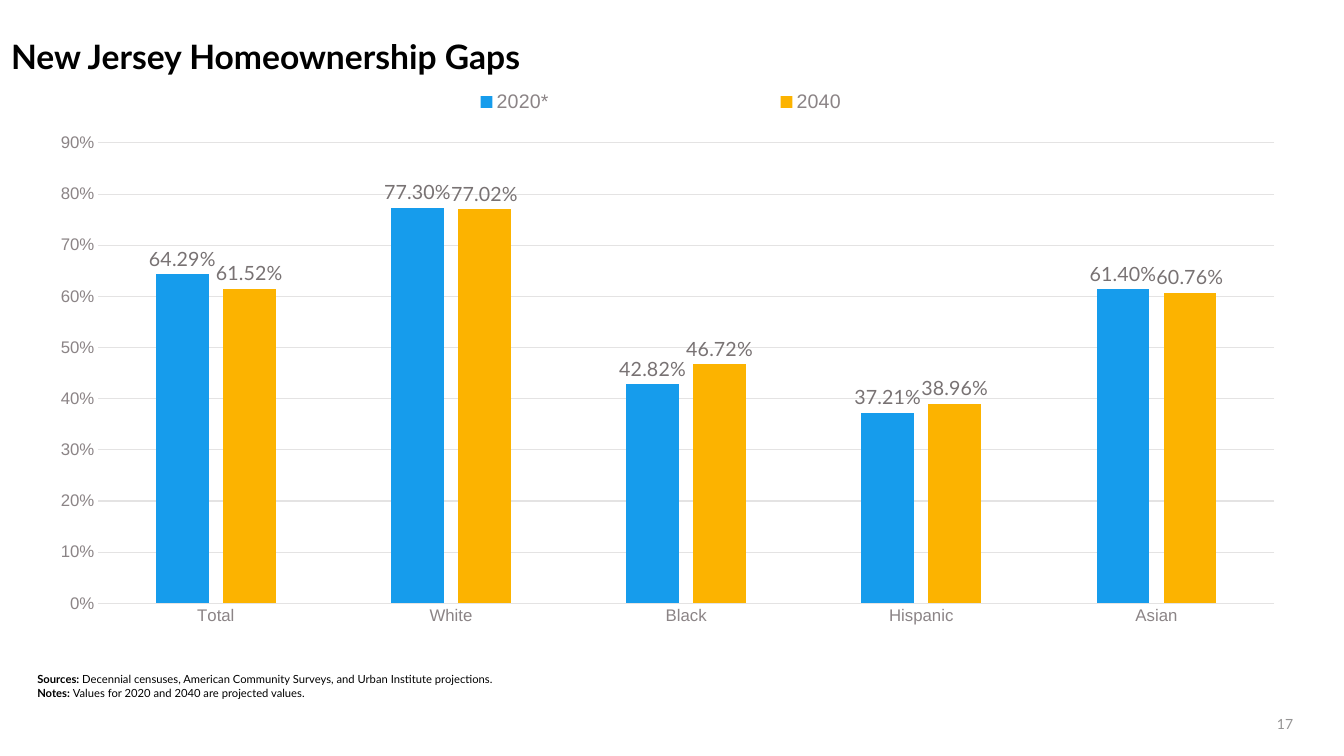
import pptx
import pptx.chart.data
import pptx.dml.color
import pptx.enum.chart
import pptx.enum.text
import pptx.oxml
import pptx.util
from pptx.oxml.ns import nsdecls, qn

Cm = pptx.util.Cm
ALIGN = pptx.enum.text.PP_ALIGN
ANCHOR = pptx.enum.text.MSO_ANCHOR
COLORS = {
    "ink": "000000", "number": "959494", "axis": "8B8486", "label": "787273",
    "grid": "E4E3E3", "2020*": "169CEC", "2040": "FCB300", "paper": "FFFFFF",
}
CATEGORIES = ["Total", "White", "Black", "Hispanic", "Asian"]
RATES = {
    "2020*": [0.6429, 0.7730, 0.4282, 0.3721, 0.6140],
    "2040": [0.6152, 0.7702, 0.4672, 0.3896, 0.6076],
}
NOTES = [
    ("Sources: ", "Decennial censuses, American Community Surveys, and Urban Institute projections."),
    ("Notes: ", "Values for 2020 and 2040 are projected values."),
]


def color(name):
    """Return the named colour."""
    return pptx.dml.color.RGBColor.from_string(COLORS[name])


class HomeownershipPage:
    """Hold the text style and the page being built."""

    def __init__(self, deck):
        """Add a title-only page to the deck."""
        self.face = "Lato"
        self.chart_face = "Arial"
        self.page = deck.slides.add_slide(deck.slide_layouts[5])

    def style(self, font, size, shade, face=None, bold=False):
        """Apply size, colour, face and weight to a font."""
        font.name = face or self.face
        font.size = pptx.util.Pt(size)
        font.bold = bold
        font.color.rgb = color(shade)

    def frame(self, box, anchor, side, edge):
        """Set wrapping, anchor and insets and return the text frame."""
        frame = box.text_frame
        frame.word_wrap = True
        frame.auto_size = pptx.enum.text.MSO_AUTO_SIZE.NONE
        frame.vertical_anchor = anchor
        frame.margin_left = frame.margin_right = Cm(side)
        frame.margin_top = frame.margin_bottom = Cm(edge)
        return frame

    def title(self, words, left, top, width, height):
        """Place and format the title."""
        box = self.page.shapes.title
        box.left, box.top, box.width, box.height = map(Cm, (left, top, width, height))
        frame = self.frame(box, ANCHOR.TOP, 0, 0.13)
        frame.text = words
        para = frame.paragraphs[0]
        para.alignment = ALIGN.LEFT
        para.line_spacing = 0.9
        self.style(para.runs[0].font, 24, "ink", bold=True)

    def number(self, words, *place):
        """Add the page number."""
        box = self.page.shapes.add_textbox(*map(Cm, place))
        frame = self.frame(box, ANCHOR.MIDDLE, 0, 0)
        frame.text = words
        para = frame.paragraphs[0]
        para.alignment = ALIGN.RIGHT
        self.style(para.runs[0].font, 10, "number")

    def notes(self, lines, *place):
        """Add notes that each open with a bold lead."""
        box = self.page.shapes.add_textbox(*map(Cm, place))
        frame = self.frame(box, ANCHOR.BOTTOM, 0.25, 0.13)
        frame.text = "\n" * (len(lines) - 1)
        for para, parts in zip(frame.paragraphs, lines):
            for words, bold in zip(parts, (True, False)):
                span = para.add_run()
                span.text = words
                self.style(span.font, 8, "ink", bold=bold)

    def layout(self, x, y, w, h, inner=False):
        """Return a manual layout element in fractions of the chart."""
        target = '<c:layoutTarget val="inner"/>' if inner else ""
        sizes = "".join(f'<c:{key} val="{val}"/>' for key, val in zip("xywh", (x, y, w, h)))
        return pptx.oxml.parse_xml(
            f'<c:layout {nsdecls("c")}><c:manualLayout>{target}<c:xMode val="edge"/>'
            f'<c:yMode val="edge"/>{sizes}</c:manualLayout></c:layout>')

    def axis(self, axis):
        """Format the tick labels and hide the tick marks."""
        axis.major_tick_mark = axis.minor_tick_mark = pptx.enum.chart.XL_TICK_MARK.NONE
        self.style(axis.tick_labels.font, 12, "axis", self.chart_face)

    def rule(self, line):
        """Format a thin grid line."""
        line.color.rgb = color("grid")
        line.width = pptx.util.Pt(0.75)

    def chart(self, categories, rates, *place):
        """Add the clustered column chart."""
        data = pptx.chart.data.CategoryChartData(number_format="0.00%")
        data.categories = categories
        for name, values in rates.items():
            data.add_series(name, values)
        kind = pptx.enum.chart.XL_CHART_TYPE.COLUMN_CLUSTERED
        chart = self.page.shapes.add_chart(kind, *map(Cm, place), data).chart
        self.style(chart.font, 10, "axis", self.chart_face)
        chart.has_title = False

        self.axis(chart.category_axis)
        self.rule(chart.category_axis.format.line)
        scale = chart.value_axis
        self.axis(scale)
        scale.minimum_scale, scale.maximum_scale, scale.major_unit = 0, 0.9, 0.1
        scale.tick_labels.number_format = "0%"
        scale.tick_labels.number_format_is_linked = False
        scale.format.line.fill.background()
        self.rule(scale.major_gridlines.format.line)

        plot = chart.plots[0]
        plot.gap_width, plot.overlap, plot.vary_by_categories = 219, -27, False
        for series in plot.series:
            series.format.fill.solid()
            series.format.fill.fore_color.rgb = color(series.name)
            labels = series.data_labels
            labels.show_value = True
            labels.number_format = "0.00%"
            labels.number_format_is_linked = False
            labels.position = pptx.enum.chart.XL_LABEL_POSITION.OUTSIDE_END
            self.style(labels.font, 14, "label")

        chart.has_legend = True
        legend = chart.legend
        legend.position = pptx.enum.chart.XL_LEGEND_POSITION.BOTTOM
        legend.include_in_layout = False
        self.style(legend.font, 14, "axis", self.chart_face)

        root = chart.element
        area = root.find(".//" + qn("c:plotArea"))
        key = root.find(".//" + qn("c:legend"))
        for parent in (area, key):
            for old in parent.findall(qn("c:layout")):
                parent.remove(old)
        area.insert(0, self.layout(0.056, 0.11, 0.928, 0.786, inner=True))
        key.find(qn("c:legendPos")).addnext(self.layout(0.18, 0.01, 0.64, 0.06))
        root.find(qn("c:chart")).addnext(pptx.oxml.parse_xml(
            f'<c:spPr {nsdecls("c", "a")}><a:solidFill><a:srgbClr val="{COLORS["paper"]}"/>'
            '</a:solidFill><a:ln><a:noFill/></a:ln></c:spPr>'))


def main():
    """Build and save the deck."""
    deck = pptx.Presentation()
    deck.slide_width, deck.slide_height = Cm(33.87), Cm(19.05)
    page = HomeownershipPage(deck)
    page.number("17", 24.97, 17.96, 7.62, 0.58)
    page.title("New Jersey Homeownership Gaps", 0.28, 0.89, 33.59, 2.16)
    page.notes(NOTES, 0.69, 16.13, 26.06, 1.63)
    page.chart(CATEGORIES, RATES, 0.69, 1.98, 31.93, 14.76)
    deck.save("out.pptx")


if __name__ == "__main__":
    main()
